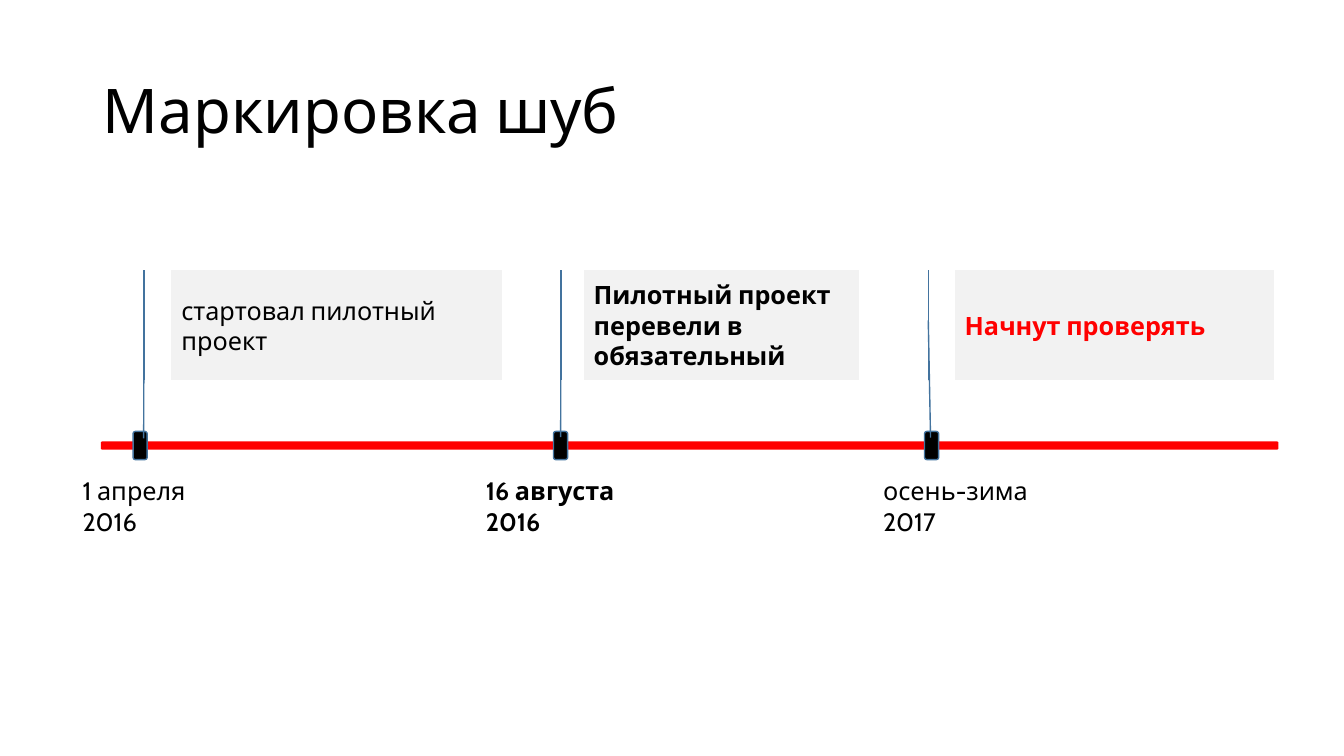
from pptx import Presentation
from pptx.dml.color import RGBColor
from pptx.enum import shapes, text
from pptx.util import Inches, Pt

BLACK = RGBColor(0x00, 0x00, 0x00)
RED = RGBColor(0xFF, 0x00, 0x00)
GREY = RGBColor(0xF2, 0xF2, 0xF2)
BLUE = RGBColor(0x43, 0x73, 0x9E)


def add_text(tf, words, size, color=BLACK, bold=False):
    tf.word_wrap = True
    p = tf.paragraphs[0]
    p.alignment = text.PP_ALIGN.LEFT
    r = p.add_run()
    r.text = words
    r.font.name = "Cabin"
    r.font.size = Pt(size)
    r.font.bold = bold
    r.font.color.rgb = color
    return p


def add_shape(kind, left, top, width, height, fill, line=None):
    sp = s.shapes.add_shape(kind, Inches(left), Inches(top), Inches(width), Inches(height))
    sp.shadow.inherit = False
    sp.fill.solid()
    sp.fill.fore_color.rgb = fill
    if line is None:
        sp.line.fill.background()
    else:
        sp.line.color.rgb = line
        sp.line.width = Pt(1)
    return sp


prs = Presentation()
prs.slide_width, prs.slide_height = Inches(13.33), Inches(7.5)
s = prs.slides.add_slide(prs.slide_layouts[5])

title = s.shapes.title
title.left, title.top = Inches(0.92), Inches(0.4)
title.width, title.height = Inches(11.5), Inches(1.45)
title.text_frame.vertical_anchor = text.MSO_ANCHOR.MIDDLE
add_text(title.text_frame, "Маркировка шуб", 44).line_spacing = 0.9

ROUNDED = shapes.MSO_SHAPE.ROUNDED_RECTANGLE
CALLOUT = shapes.MSO_SHAPE.LINE_CALLOUT_1_ACCENT_BAR
add_shape(ROUNDED, 1, 4.38, 11.68, 0.08, RED)

# date, date left, date width, marker left, event, event left, event width,
# pointer end (y, x), event colour, date bold, event bold
milestones = [
    ("1 апреля 2016", 0.72, 1.69, 1.32, "стартовал пилотный проект",
     1.7, 3.28, (1.531, -0.084), BLACK, False, False),
    ("16 августа 2016", 4.72, 1.81, 5.49, "Пилотный проект перевели в обязательный",
     5.79, 2.73, (1.519, -0.084), BLACK, True, True),
    ("осень-зима 2017", 8.66, 2.02, 9.17, "Начнут проверять",
     9.47, 3.17, (1.524, -0.076), RED, False, True),
]
for (date, date_left, date_width, marker_left, event, event_left, event_width,
     pointer_end, color, date_bold, event_bold) in milestones:
    tb = s.shapes.add_textbox(Inches(date_left), Inches(4.67), Inches(date_width), Inches(0.4))
    add_text(tb.text_frame, date, 18, bold=date_bold)

    add_shape(ROUNDED, marker_left, 4.28, 0.14, 0.28, BLACK, BLUE)

    callout = add_shape(CALLOUT, event_left, 2.68, event_width, 1.09, GREY, BLUE)
    for i, value in enumerate((0.457, -0.083, *pointer_end)):
        callout.adjustments[i] = value
    callout.text_frame.vertical_anchor = text.MSO_ANCHOR.MIDDLE
    add_text(callout.text_frame, event, 18, color, event_bold)

prs.save("out.pptx")
